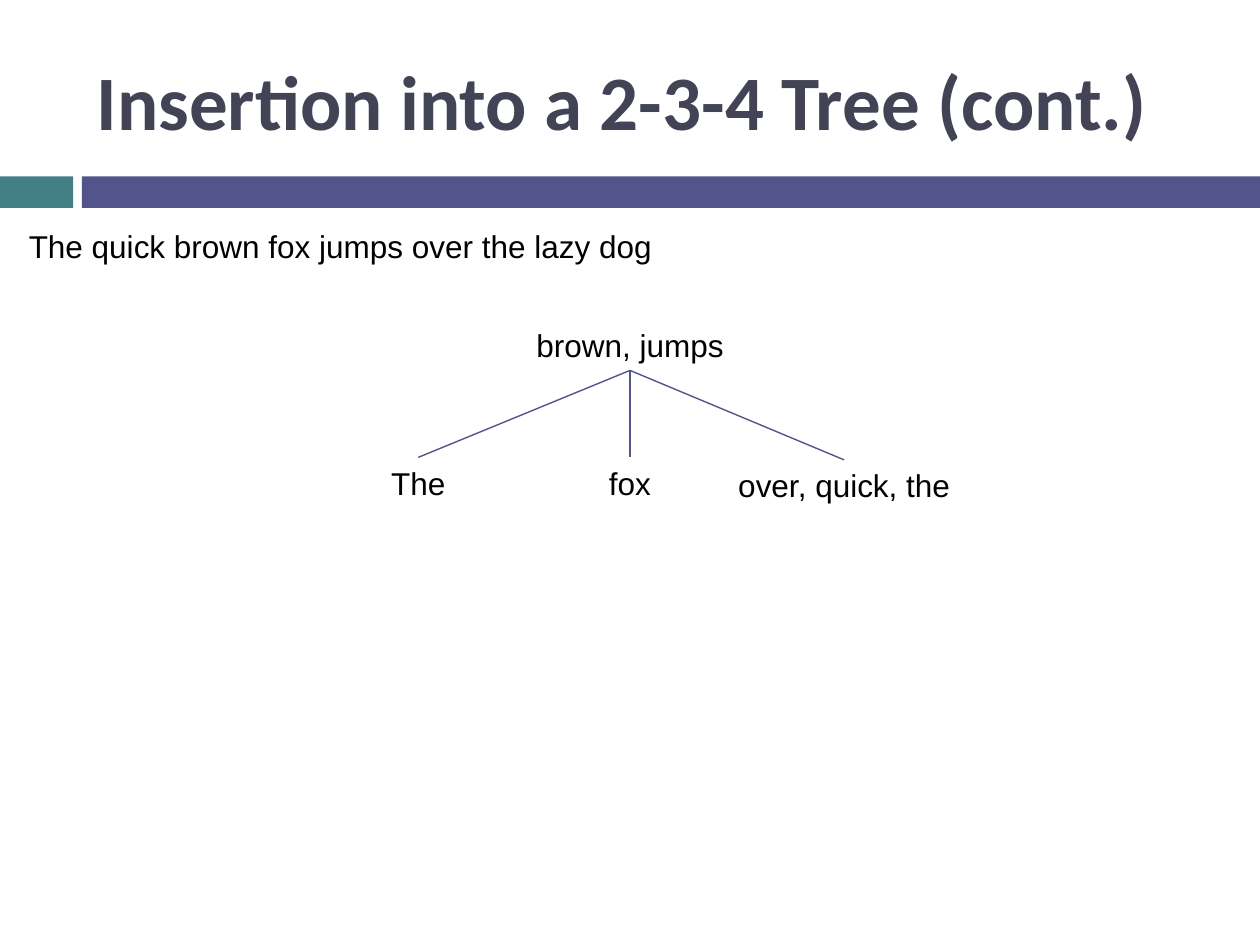
from dataclasses import dataclass

from lxml.etree import SubElement
from pptx import Presentation
from pptx.dml.color import RGBColor
from pptx.enum.shapes import MSO_CONNECTOR, MSO_SHAPE
from pptx.enum.text import MSO_ANCHOR, MSO_AUTO_SIZE, PP_ALIGN
from pptx.oxml.ns import qn
from pptx.util import Inches, Pt

CELL = 0.1  # inches per grid column and row
COLUMNS, ROWS = 100, 75
BOTTOM, TOP = 2, 0


@dataclass(frozen=True)
class Theme:
    teal: RGBColor = RGBColor(0x43, 0x80, 0x86)
    violet: RGBColor = RGBColor(0x53, 0x54, 0x8A)
    heading: RGBColor = RGBColor(0x42, 0x44, 0x56)
    ink: RGBColor = RGBColor(0, 0, 0)
    heading_font: str = "Calibri"
    body_font: str = "Arial"
    heading_size: int = 44
    body_size: int = 18
    line_width: float = 0.79


def grid(*cells):
    return [Inches(cell * CELL) for cell in cells]


class SlideBuilder:
    def __init__(self, slide, theme):
        self.slide = slide
        self.theme = theme

    def bar(self, left, top, width, height, color):
        shape = self.slide.shapes.add_shape(
            MSO_SHAPE.RECTANGLE, *grid(left, top, width, height))
        shape.shadow.inherit = False
        shape.fill.solid()
        shape.fill.fore_color.rgb = color
        shape.line.fill.background()

    def text_box(self, left, top, width, height, text, font, size, color,
                 bold=False, alignment=PP_ALIGN.LEFT):
        shape = self.slide.shapes.add_textbox(*grid(left, top, width, height))
        paragraph = shape.text_frame.paragraphs[0]
        paragraph.alignment = alignment
        run = paragraph.add_run()
        run.text = text
        run.font.name = font
        run.font.size = Pt(size)
        run.font.bold = bold
        run.font.color.rgb = color
        return shape

    def title(self, left, top, width, height, text):
        theme = self.theme
        shape = self.text_box(left, top, width, height, text, theme.heading_font,
                              theme.heading_size, theme.heading, bold=True)
        shape.text_frame.word_wrap = True
        shape.text_frame.vertical_anchor = MSO_ANCHOR.MIDDLE

    def label(self, left, top, width, text, alignment=PP_ALIGN.LEFT):
        theme = self.theme
        shape = self.text_box(left, top, width, 4, text, theme.body_font,
                              theme.body_size, theme.ink, alignment=alignment)
        shape.text_frame.word_wrap = False
        shape.text_frame.auto_size = MSO_AUTO_SIZE.SHAPE_TO_FIT_TEXT
        return shape

    def node(self, center, top, width, text):
        return self.label(center - width / 2, top, width, text, PP_ALIGN.CENTER)

    def branch(self, parent, child):
        line = self.slide.shapes.add_connector(MSO_CONNECTOR.STRAIGHT, 0, 0, 0, 0)
        line.begin_connect(parent, BOTTOM)
        line.end_connect(child, TOP)
        line.line.color.rgb = self.theme.violet
        line.line.width = Pt(self.theme.line_width)
        SubElement(line.element.spPr, qn("a:effectLst"))


def main():
    presentation = Presentation()
    presentation.slide_width, presentation.slide_height = grid(COLUMNS, ROWS)
    slide = presentation.slides.add_slide(presentation.slide_layouts[6])
    theme = Theme()
    builder = SlideBuilder(slide, theme)

    builder.bar(0, 14, 5.8, 2.5, theme.teal)
    builder.bar(6.5, 14, COLUMNS - 6.5, 2.5, theme.violet)
    builder.title(6.7, 2.5, 89.2, 10.8, "Insertion into a 2-3-4 Tree (cont.)")
    builder.label(1.3, 17.5, 51.9, "The quick brown fox jumps over the lazy dog")

    root = builder.node(COLUMNS / 2, 25.4, 17, "brown, jumps")
    children = [
        (33.2, 36.3, 6.4, "The"),
        (50, 36.3, 5.4, "fox"),
        (67, 36.5, 19, "over, quick, the"),
    ]
    for child in children:
        builder.branch(root, builder.node(*child))

    presentation.save("out.pptx")


if __name__ == "__main__":
    main()
